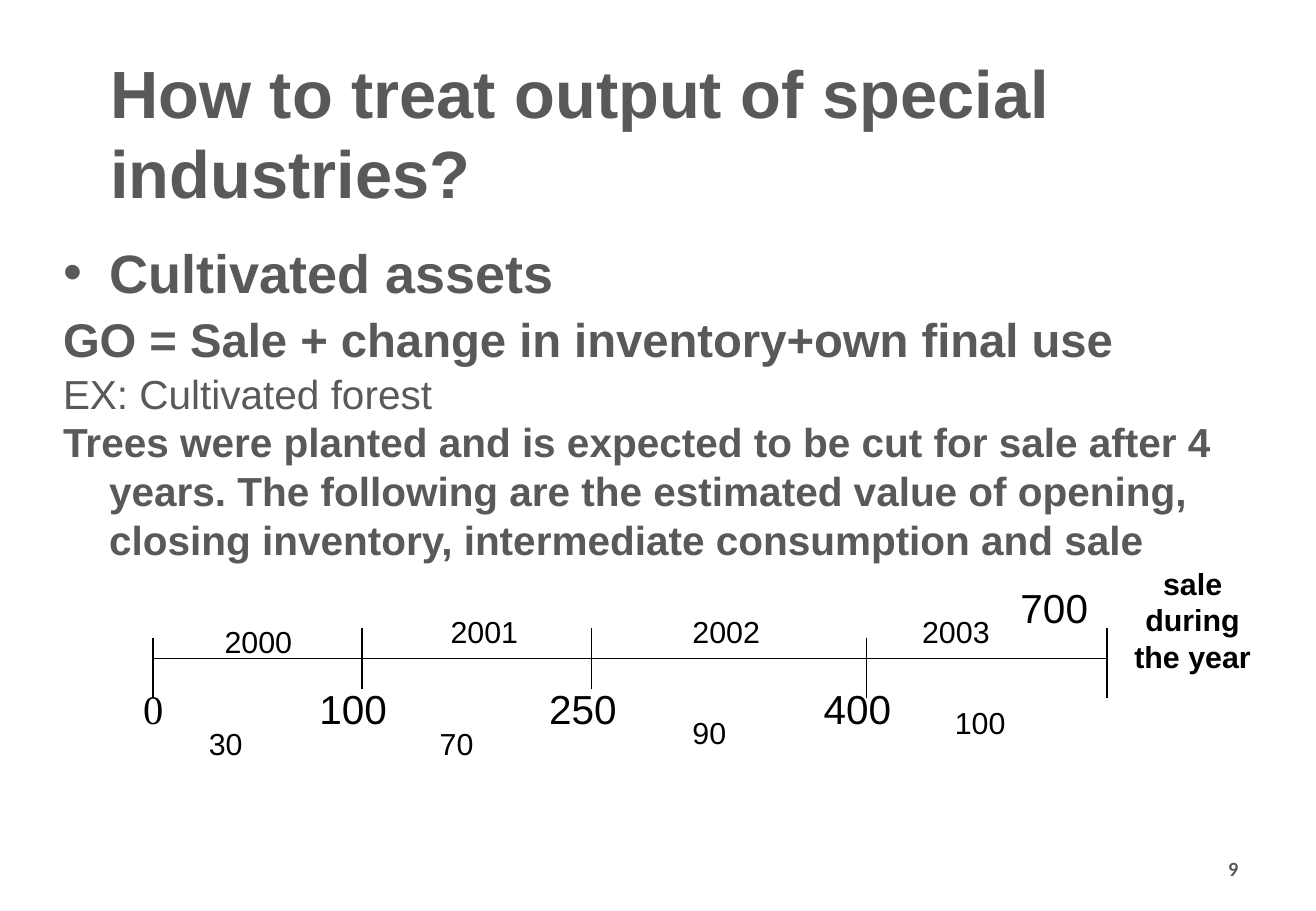
from lxml import etree
from pptx import Presentation
from pptx.dml.color import RGBColor
from pptx.enum import shapes, text
from pptx.oxml import ns
from pptx.util import Inches, Pt

COLORS = {"gray": "595959", "black": "000000"}
LEFT, CENTER, RIGHT = text.PP_ALIGN.LEFT, text.PP_ALIGN.CENTER, text.PP_ALIGN.RIGHT
TOP, MIDDLE = text.MSO_ANCHOR.TOP, text.MSO_ANCHOR.MIDDLE

presentation = Presentation()
presentation.slide_width = Inches(10.83)
presentation.slide_height = Inches(7.5)
slide = presentation.slides.add_slide(presentation.slide_layouts[6])


def add_text(box, paragraphs, color="black", align=LEFT, anchor=TOP, wrap=True):
    """Add a text box; each paragraph is a list of (words, font values) runs."""
    frame = slide.shapes.add_textbox(*map(Inches, box)).text_frame
    frame.word_wrap = wrap
    frame.vertical_anchor = anchor
    for number, runs in enumerate(paragraphs):
        paragraph = frame.add_paragraph() if number else frame.paragraphs[0]
        paragraph.alignment = align
        for words, values in runs:
            run = paragraph.add_run()
            run.text = words
            run.font.color.rgb = RGBColor.from_string(COLORS[color])
            for name, value in ({"name": "Arial"} | values).items():
                setattr(run.font, name, value)
    return frame


def add_line(x1, y1, x2, y2):
    line = slide.shapes.add_connector(
        shapes.MSO_CONNECTOR.STRAIGHT, *map(Inches, (x1, y1, x2, y2)))
    line.line.color.rgb = RGBColor.from_string(COLORS["black"])
    line.line.width = Pt(0.75)
    etree.SubElement(line._element.spPr, ns.qn("a:effectLst"))


# Title
add_text((0.81, 0.42, 9.2, 1.33),
         [[("How to treat output of special industries?",
            {"size": Pt(39.6), "bold": True})]],
         color="gray", anchor=MIDDLE)

# Body with hanging indents, bullet on the first paragraph only
body = add_text((0.42, 1.92, 10.02, 4.92), [
    [("Cultivated assets", {"size": Pt(32), "bold": True})],
    [("GO = Sale + change in inventory+own final use", {"size": Pt(28), "bold": True}),
     (" ", {"size": Pt(32)})],
    [("EX: Cultivated forest", {"size": Pt(24)})],
    [("Trees were planted and is expected to be cut for sale after 4 years. "
      "The following are the estimated value of opening, closing inventory, "
      "intermediate consumption and sale", {"size": Pt(24), "bold": True})],
], color="gray")
for number, paragraph in enumerate(body.paragraphs):
    properties = paragraph._p.get_or_add_pPr()
    properties.set("marL", str(Inches(0.38)))
    properties.set("indent", str(-Inches(0.38)))
    if number == 0:
        etree.SubElement(properties, ns.qn("a:buFont"), typeface="Arial")
        etree.SubElement(properties, ns.qn("a:buChar"), char="•")
    else:
        etree.SubElement(properties, ns.qn("a:buNone"))

# Slide number
add_text((7.76, 6.95, 2.53, 0.4),
         [[("9", {"name": "Calibri", "size": Pt(12), "bold": True})]],
         color="gray", align=RIGHT, anchor=MIDDLE)

# Timeline axis and year ticks
add_line(1.26, 5.42, 9.11, 5.42)
for x, top, bottom in [(1.26, 5.25, 5.75), (2.98, 5.17, 5.67), (4.87, 5.17, 5.67),
                       (7.13, 5.25, 5.75), (9.11, 5.17, 5.75)]:
    add_line(x, top, x, bottom)

# Inventory values, in large type
for label, x, y, width, font in [
        ("0", 1.08, 5.58, 1.08, "Times New Roman"), ("100", 2.53, 5.58, 0.81, "Arial"),
        ("250", 4.42, 5.58, 1.26, "Arial"), ("400", 6.68, 5.58, 1.17, "Arial"),
        ("700", 8.3, 4.75, 1.17, "Arial")]:
    add_text((x, y, width, 0.5), [[(label, {"name": font, "size": Pt(24)})]])

# Years above the axis and intermediate consumption below it
for label, x, y, width in [
        ("2000", 1.75, 5.08, 0.9), ("2001", 3.61, 5, 0.9),
        ("2002", 5.6, 5, 0.9), ("2003", 7.49, 5, 0.9),
        ("30", 1.62, 5.92, 0.72), ("70", 3.52, 5.92, 0.72),
        ("90", 5.6, 5.83, 0.72), ("100", 7.76, 5.75, 1.26)]:
    add_text((x, y, width, 0.4), [[(label, {"size": Pt(18)})]])

# Sale label
add_text((9.05, 4.75, 1.53, 0.7),
         [[(words, {"size": Pt(18), "bold": True})] for words in ("sale during", "the year")],
         align=CENTER, anchor=MIDDLE, wrap=False)

presentation.save("out.pptx")
